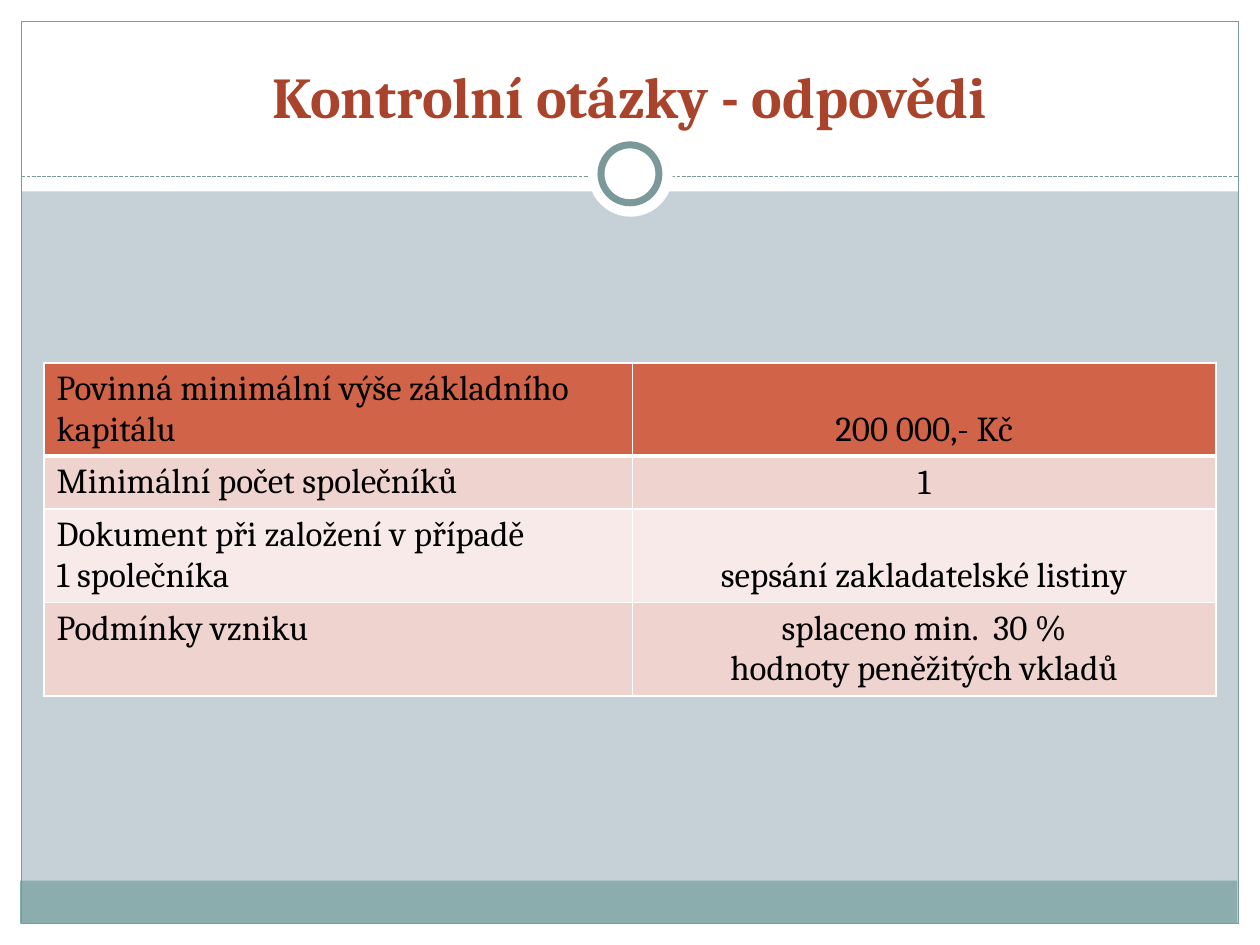
"""Build the slide with control questions and answers about founding a company."""
import lxml.etree
import pptx
import pptx.dml.color
import pptx.enum.dml
import pptx.enum.shapes
import pptx.enum.text
import pptx.oxml.ns
import pptx.util
from pptx.util import Inches

THEME = {
    "font": "Cambria", "title_size": 33, "body_size": 20,
    "title": "A9432B", "text": "000000", "paper": "FFFFFF",
    "background": "C5D1D7", "footer": "8CADAE", "rule": "7C999A",
    "header_row": "D16349", "odd_row": "EED3CF", "even_row": "F7EAE9",
}
SHAPE = pptx.enum.shapes.MSO_SHAPE
ALIGN = pptx.enum.text.PP_ALIGN
ANCHOR = pptx.enum.text.MSO_ANCHOR
rgb = pptx.dml.color.RGBColor.from_string
qn = pptx.oxml.ns.qn


def write(frame, text, *, size, color, align, bold=False):
    for index, line in enumerate(text.split("\n")):
        paragraph = frame.add_paragraph() if index else frame.paragraphs[0]
        paragraph.alignment = align
        run = paragraph.add_run()
        run.text = line
        run.font.name = THEME["font"]
        run.font.size = pptx.util.Pt(size)
        run.font.bold = bold
        run.font.color.rgb = rgb(color)


def add_part(slide, kind, box, fill=None, line=None, width=0.75):
    part = slide.shapes.add_shape(kind, *map(Inches, box))
    part.shadow.inherit = False
    if fill:
        part.fill.solid()
        part.fill.fore_color.rgb = rgb(fill)
    else:
        part.fill.background()
    if line:
        part.line.color.rgb = rgb(line)
        part.line.width = pptx.util.Pt(width)
    else:
        part.line.fill.background()


presentation = pptx.Presentation()
presentation.slide_width = Inches(10)
presentation.slide_height = Inches(7.5)
slide = presentation.slides.add_slide(presentation.slide_layouts[5])
slide.background.fill.solid()
slide.background.fill.fore_color.rgb = rgb(THEME["background"])

margins = [(0, 7.33, 10, 0.17), (0, 0, 10, 1.52), (0, 0, 0.17, 7.5), (9.83, 0, 0.17, 7.5)]
for margin in margins:
    add_part(slide, SHAPE.RECTANGLE, margin, THEME["paper"])
add_part(slide, SHAPE.RECTANGLE, (0.16, 6.99, 9.66, 0.34), THEME["footer"])
add_part(slide, SHAPE.RECTANGLE, (0.17, 0.17, 9.66, 7.16), line=THEME["rule"])

divider = slide.shapes.add_connector(
    pptx.enum.shapes.MSO_CONNECTOR.STRAIGHT, Inches(0.17), Inches(1.4), Inches(9.83), Inches(1.4))
divider.line.color.rgb = rgb(THEME["rule"])
divider.line.width = pptx.util.Pt(0.75)
divider.line.dash_style = pptx.enum.dml.MSO_LINE.SQUARE_DOT
lxml.etree.SubElement(divider.element.spPr, qn("a:effectLst"))

add_part(slide, SHAPE.OVAL, (4.67, 1.05, 0.67, 0.67), THEME["paper"])
add_part(slide, SHAPE.OVAL, (4.77, 1.15, 0.46, 0.46), THEME["paper"], THEME["rule"], 4)

heading = slide.shapes.title
heading.left, heading.top = Inches(0.33), Inches(0.25)
heading.width, heading.height = Inches(9.33), Inches(0.83)
heading.text_frame.vertical_anchor = ANCHOR.BOTTOM
write(heading.text_frame, "Kontrolní otázky - odpovědi", size=THEME["title_size"],
      color=THEME["title"], align=ALIGN.CENTER, bold=True)
heading.element.getparent().append(heading.element)

answers = [
    ("Povinná minimální výše základního kapitálu", "200 000,- Kč", 0.74, "header_row"),
    ("Minimální počet společníků", "1", 0.42, "odd_row"),
    ("Dokument při založení v případě\n1 společníka", "sepsání zakladatelské listiny", 0.74, "even_row"),
    ("Podmínky vzniku", "splaceno min.  30 %\nhodnoty peněžitých vkladů", 0.74, "odd_row"),
]
table = slide.shapes.add_table(
    len(answers), 2, Inches(0.35), Inches(2.88), Inches(9.3), Inches(2.64)).table
table.columns[0].width = Inches(4.67)
table.columns[1].width = Inches(4.63)

for row, (question, answer, height, row_fill) in enumerate(answers):
    table.rows[row].height = Inches(height)
    columns = [(question, ALIGN.LEFT, ANCHOR.TOP), (answer, ALIGN.CENTER, ANCHOR.BOTTOM)]
    for column, (text, align, anchor) in enumerate(columns):
        cell = table.cell(row, column)
        cell.vertical_anchor = anchor
        write(cell.text_frame, text, size=THEME["body_size"], color=THEME["text"], align=align)
        properties = cell._tc.get_or_add_tcPr()
        for side in ("lnL", "lnR", "lnT", "lnB"):
            thick = (row, side) in ((0, "lnB"), (1, "lnT"))
            border = lxml.etree.SubElement(
                properties, qn(f"a:{side}"), w=str(pptx.util.Pt(3 if thick else 1)))
            paint = lxml.etree.SubElement(border, qn("a:solidFill"))
            lxml.etree.SubElement(paint, qn("a:srgbClr"), val=THEME["paper"])
        cell.fill.solid()
        cell.fill.fore_color.rgb = rgb(THEME[row_fill])

presentation.save("out.pptx")
